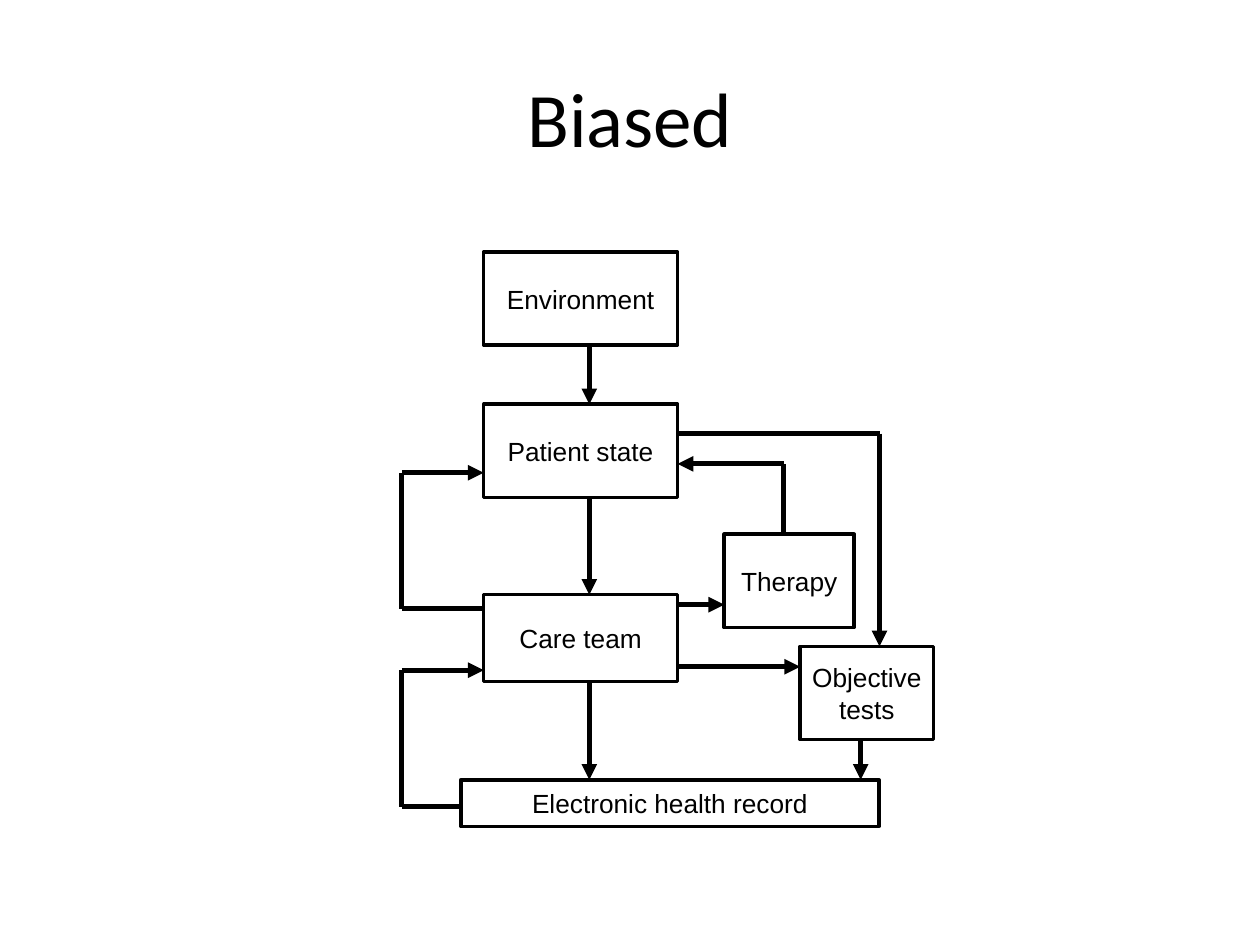
from itertools import pairwise

from lxml.etree import SubElement
from pptx import Presentation
from pptx.dml.color import RGBColor
from pptx.enum.shapes import MSO_CONNECTOR as Connector, MSO_SHAPE as Shape
from pptx.enum.text import MSO_ANCHOR as Anchor, PP_ALIGN as Align
from pptx.oxml.ns import qn
from pptx.util import Cm, Pt

BLACK = "000000"
TITLE_FONT = {"name": "Calibri", "size": Pt(44)}
LABEL_FONT = {"name": "Arial", "size": Pt(15)}
LABEL_FRAME = {
    "word_wrap": True, "vertical_anchor": Anchor.MIDDLE,
    "margin_left": Cm(0.15), "margin_right": Cm(0.15),
    "margin_top": Cm(0.08), "margin_bottom": Cm(0.08),
}

# All diagram lengths are in cm, measured from its top left corner.
COLUMN_LEFT, COLUMN_WIDTH = 1.65, 3.91
COLUMN_RIGHT = COLUMN_LEFT + COLUMN_WIDTH
FLOW_X = 3.78
BOX_HEIGHT = 1.88
PATIENT_TOP, CARE_TOP, RECORD_TOP = 3.07, 6.91, 10.64
PATIENT_BOTTOM = PATIENT_TOP + BOX_HEIGHT
CARE_HEIGHT = 1.75
THERAPY_LEFT, THERAPY_TOP = 6.5, 5.69
TESTS_LEFT, TESTS_TOP = 8.03, 7.95
RECORD_LEFT = 1.19

BOXES = [
    ("Environment", COLUMN_LEFT, 0, COLUMN_WIDTH, BOX_HEIGHT),
    ("Patient state", COLUMN_LEFT, PATIENT_TOP, COLUMN_WIDTH, BOX_HEIGHT),
    ("Care team", COLUMN_LEFT, CARE_TOP, COLUMN_WIDTH, CARE_HEIGHT),
    ("Therapy", THERAPY_LEFT, THERAPY_TOP, 2.62, BOX_HEIGHT),
    ("Objective tests", TESTS_LEFT, TESTS_TOP, 2.69, BOX_HEIGHT),
    ("Electronic health record", RECORD_LEFT, RECORD_TOP, 8.43, 0.94),
]

# Each route ends in an arrowhead.
ROUTES = [
    [(FLOW_X, BOX_HEIGHT), (FLOW_X, PATIENT_TOP)],
    [(FLOW_X, PATIENT_BOTTOM), (FLOW_X, CARE_TOP)],
    [(FLOW_X, CARE_TOP + CARE_HEIGHT), (FLOW_X, RECORD_TOP)],
    [(COLUMN_RIGHT, 7.11), (THERAPY_LEFT, 7.11)],
    [(COLUMN_RIGHT, 8.36), (TESTS_LEFT, 8.36)],
    [(9.25, TESTS_TOP + BOX_HEIGHT), (9.25, RECORD_TOP)],
    [(7.7, THERAPY_TOP), (7.7, 4.27), (COLUMN_RIGHT, 4.27)],
    [(COLUMN_RIGHT, 3.66), (9.63, 3.66), (9.63, TESTS_TOP)],
    [(COLUMN_LEFT, 7.19), (0, 7.19), (0, 4.45), (COLUMN_LEFT, 4.45)],
    [(RECORD_LEFT, 11.18), (0, 11.18), (0, 8.43), (COLUMN_LEFT, 8.43)],
]


def color(value):
    return RGBColor.from_string(value)


def set_attributes(target, values):
    for name, value in values.items():
        setattr(target, name, value)


def write_text(shape, text, font_values):
    set_attributes(shape.text_frame, LABEL_FRAME)
    paragraph = shape.text_frame.paragraphs[0]
    paragraph.alignment = Align.CENTER
    run = paragraph.add_run()
    run.text = text
    set_attributes(run.font, font_values)
    run.font.color.rgb = color(BLACK)


def add_title(slide, left, top, width, height):
    title = slide.shapes.add_textbox(Cm(left), Cm(top), Cm(width), Cm(height))
    write_text(title, "Biased", TITLE_FONT)


def add_box(slide, text, left, top, width, height):
    box = slide.shapes.add_shape(
        Shape.RECTANGLE, Cm(left), Cm(top), Cm(width), Cm(height))
    box.shadow.inherit = False
    box.fill.background()
    box.line.color.rgb = color(BLACK)
    box.line.width = Pt(2)
    write_text(box, text, LABEL_FONT)


def add_line(slide, start, end, arrow):
    line = slide.shapes.add_connector(
        Connector.STRAIGHT, *(Cm(length) for length in (*start, *end)))
    line.line.color.rgb = color(BLACK)
    line.line.width = Pt(3)
    properties = line._element.spPr
    if arrow:
        SubElement(properties.find(qn("a:ln")), qn("a:tailEnd"), type="triangle")
    SubElement(properties, qn("a:effectLst"))


def add_flow_diagram(slide, left, top):
    for text, x, y, width, height in BOXES:
        add_box(slide, text, left + x, top + y, width, height)
    for route in ROUTES:
        points = [(left + x, top + y) for x, y in route]
        for start, end in pairwise(points):
            add_line(slide, start, end, arrow=end == points[-1])


def main():
    presentation = Presentation()
    presentation.slide_width, presentation.slide_height = Cm(25.4), Cm(19.05)
    slide = presentation.slides.add_slide(presentation.slide_layouts[6])
    add_title(slide, 1.27, 0.76, 22.86, 3.18)
    add_flow_diagram(slide, 8.1, 5.08)
    presentation.save("out.pptx")


if __name__ == "__main__":
    main()
